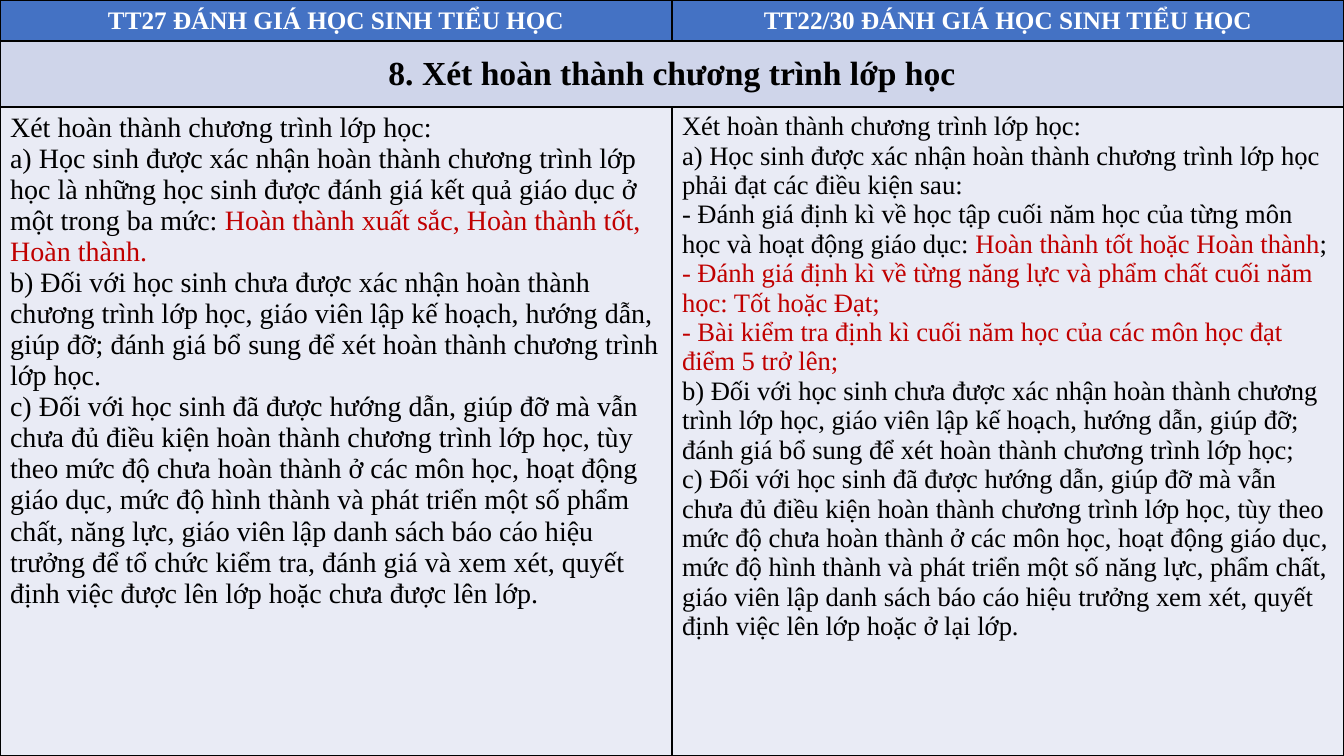
"""Build a slide that compares two rules for grading primary pupils."""
from lxml import etree
from pptx import Presentation
from pptx.dml.color import RGBColor
from pptx.enum.text import MSO_ANCHOR, PP_ALIGN
from pptx.oxml.ns import qn
from pptx.util import Emu, Pt

CENTER, LEFT = PP_ALIGN.CENTER, PP_ALIGN.LEFT
MIDDLE, TOP = MSO_ANCHOR.MIDDLE, MSO_ANCHOR.TOP

WHITE = RGBColor(0xFF, 0xFF, 0xFF)
BLACK = RGBColor(0x00, 0x00, 0x00)
RED = RGBColor(0xC0, 0x00, 0x00)
BLUE = RGBColor(0x44, 0x72, 0xC4)
BAND = RGBColor(0xCF, 0xD5, 0xEA)
PALE = RGBColor(0xE9, 0xEB, 0xF5)

FONT = "Times New Roman"
WIDTH, HEIGHT = 1344, 756
ROWS = (41, 66, 649)

HEADS = (
    "TT27 ĐÁNH GIÁ HỌC SINH TIỂU HỌC",
    "TT22/30 ĐÁNH GIÁ HỌC SINH TIỂU HỌC",
)
TITLE = "8. Xét hoàn thành chương trình lớp học"
INTRO = "Xét hoàn thành chương trình lớp học:"

NEW_RULE = (
    INTRO,
    (
        "a) Học sinh được xác nhận hoàn thành chương trình lớp học là những "
        "học sinh được đánh giá kết quả giáo dục ở một trong ba mức: ",
        ("Hoàn thành xuất sắc, Hoàn thành tốt, Hoàn thành.", RED),
    ),
    "b) Đối với học sinh chưa được xác nhận hoàn thành chương trình lớp học, "
    "giáo viên lập kế hoạch, hướng dẫn, giúp đỡ; đánh giá bổ sung để xét "
    "hoàn thành chương trình lớp học.",
    "c) Đối với học sinh đã được hướng dẫn, giúp đỡ mà vẫn chưa đủ điều kiện "
    "hoàn thành chương trình lớp học, tùy theo mức độ chưa hoàn thành ở các "
    "môn học, hoạt động giáo dục, mức độ hình thành và phát triển một số "
    "phẩm chất, năng lực, giáo viên lập danh sách báo cáo hiệu trưởng để tổ "
    "chức kiểm tra, đánh giá và xem xét, quyết định việc được lên lớp hoặc "
    "chưa được lên lớp.",
)
OLD_RULE = (
    INTRO,
    "a) Học sinh được xác nhận hoàn thành chương trình lớp học phải đạt các "
    "điều kiện sau:",
    (
        "- Đánh giá định kì về học tập cuối năm học của từng môn học và hoạt "
        "động giáo dục: ",
        ("Hoàn thành tốt hoặc Hoàn thành", RED),
        ";",
    ),
    (("- Đánh giá định kì về từng năng lực và phẩm chất cuối năm học: Tốt "
      "hoặc Đạt;", RED),),
    (("- Bài kiểm tra định kì cuối năm học của các môn học đạt điểm 5 trở "
      "lên;", RED),),
    "b) Đối với học sinh chưa được xác nhận hoàn thành chương trình lớp học, "
    "giáo viên lập kế hoạch, hướng dẫn, giúp đỡ; đánh giá bổ sung để xét "
    "hoàn thành chương trình lớp học;",
    "c) Đối với học sinh đã được hướng dẫn, giúp đỡ mà vẫn chưa đủ điều kiện "
    "hoàn thành chương trình lớp học, tùy theo mức độ chưa hoàn thành ở các "
    "môn học, hoạt động giáo dục, mức độ hình thành và phát triển một số "
    "năng lực, phẩm chất, giáo viên lập danh sách báo cáo hiệu trưởng xem "
    "xét, quyết định việc lên lớp hoặc ở lại lớp.",
)


def px(count):
    """Turn pixels into EMU."""
    return Emu(round(count * 914400 / 100.8))


def write(frame, paras, size=20, color=BLACK, bold=False, align=LEFT):
    """Write paragraphs, each a string or a tuple of runs, into a frame."""
    for index, runs in enumerate(paras):
        para = frame.paragraphs[0] if index == 0 else frame.add_paragraph()
        para.alignment = align
        for part in (runs,) if isinstance(runs, str) else runs:
            text, tint = (part, color) if isinstance(part, str) else part
            run = para.add_run()
            run.text = text
            run.font.name = FONT
            run.font.size = Pt(size)
            run.font.bold = bold
            run.font.color.rgb = tint


def edge(cell, color=BLACK, width=1):
    """Draw a line on all four sides of a cell."""
    props = cell._tc.get_or_add_tcPr()
    for side in ("a:lnL", "a:lnR", "a:lnT", "a:lnB"):
        line = etree.SubElement(props, qn(side), w=str(Pt(width)))
        fill = etree.SubElement(line, qn("a:solidFill"))
        etree.SubElement(fill, qn("a:srgbClr"), val=str(color))


def paint(cell, color, anchor=MIDDLE):
    """Give a cell its border, fill and anchor."""
    edge(cell)
    cell.fill.solid()
    cell.fill.fore_color.rgb = color
    cell.vertical_anchor = anchor


def add_grid(slide):
    """Add the bare table with its rows, columns and cell colours."""
    shape = slide.shapes.add_table(len(ROWS), 2, 0, 0, px(WIDTH), px(HEIGHT))
    grid = shape.table
    grid.first_row = grid.horz_banding = False
    for col in grid.columns:
        col.width = px(WIDTH // 2)
    looks = ((BLUE, MIDDLE), (BAND, MIDDLE), (PALE, TOP))
    for index, (height, look) in enumerate(zip(ROWS, looks)):
        grid.rows[index].height = px(height)
        for cell in grid.rows[index].cells:
            paint(cell, *look)
    grid.cell(1, 0).merge(grid.cell(1, 1))
    return grid


def main():
    """Build and save the slide."""
    deck = Presentation()
    deck.slide_width, deck.slide_height = px(WIDTH), px(HEIGHT)
    slide = deck.slides.add_slide(deck.slide_layouts[6])
    grid = add_grid(slide)
    for col, head in enumerate(HEADS):
        write(grid.cell(0, col).text_frame, [head], size=18, color=WHITE,
              bold=True, align=CENTER)
    write(grid.cell(1, 0).text_frame, [TITLE], size=24, bold=True, align=CENTER)
    for col, (rule, size) in enumerate(((NEW_RULE, 20), (OLD_RULE, 19))):
        write(grid.cell(2, col).text_frame, rule, size=size)
    deck.save("out.pptx")


if __name__ == "__main__":
    main()
